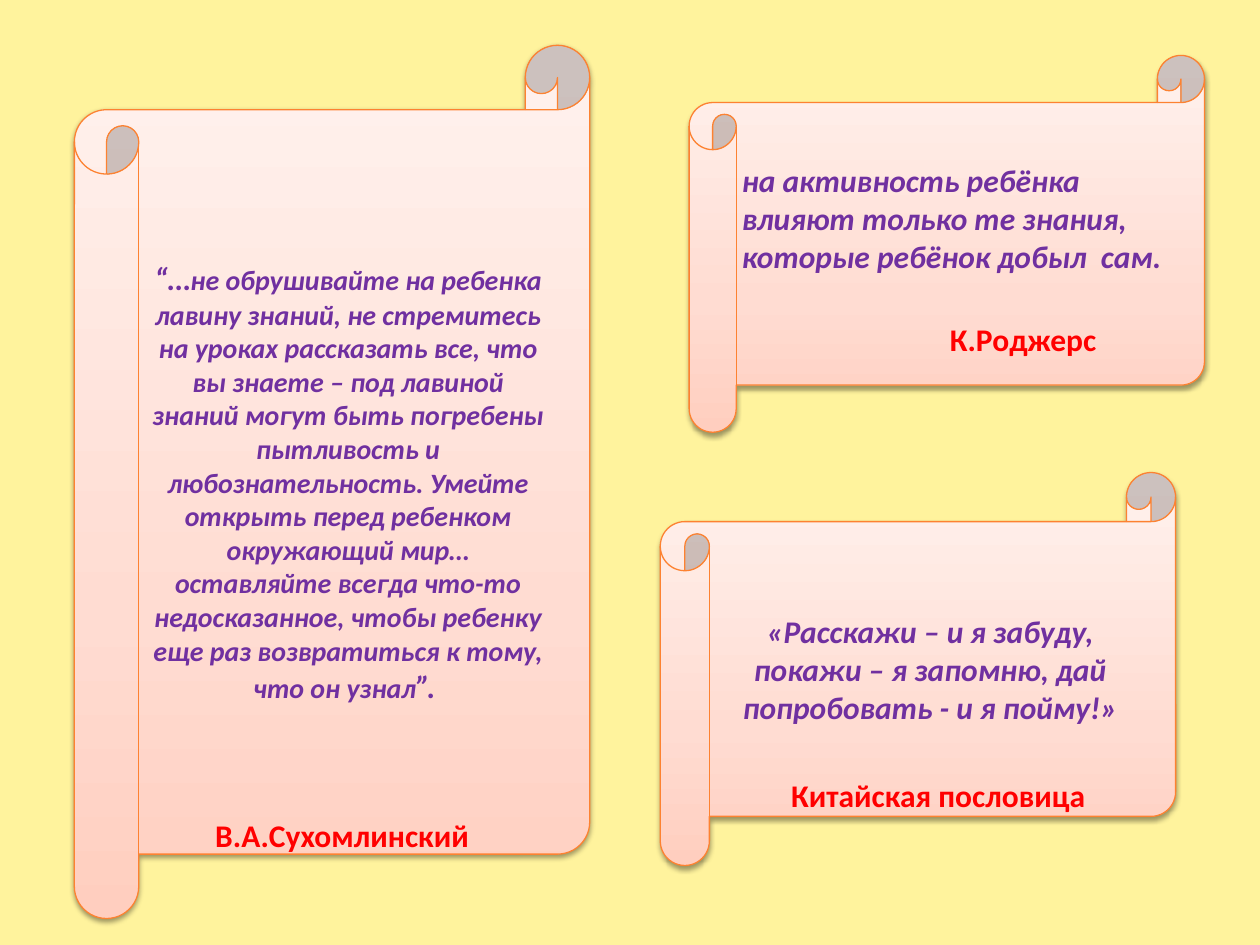
from dataclasses import dataclass

from lxml import etree
from pptx import Presentation
from pptx.dml.color import RGBColor
from pptx.enum.shapes import MSO_SHAPE
from pptx.enum.text import MSO_ANCHOR, MSO_AUTO_SIZE, PP_ALIGN
from pptx.oxml.ns import qn
from pptx.shapes.autoshape import Shape
from pptx.slide import Slide
from pptx.text.text import _Paragraph
from pptx.util import Pt

SCROLL = MSO_SHAPE.HORIZONTAL_SCROLL
MIDDLE = MSO_ANCHOR.MIDDLE
CENTER = PP_ALIGN.CENTER
LEFT = PP_ALIGN.LEFT
FIT_SHAPE = MSO_AUTO_SIZE.SHAPE_TO_FIT_TEXT
BLANK_LAYOUT = 6


@dataclass(frozen=True)
class Theme:
    font: str = "Calibri"
    background: str = "FFF39D"
    outline: str = "FD8231"
    quote: str = "7030A0"
    author: str = "FF0000"
    shadow: str = "000000"
    paper: tuple[tuple[int, str], ...] = ((0, "FFCEBF"), (35, "FFDCD2"), (100, "FFF2EE"))
    large: float = 18
    small: float = 16


@dataclass(frozen=True)
class Box:
    left: float
    top: float
    width: float
    height: float

    def lengths(self) -> tuple[Pt, Pt, Pt, Pt]:
        return Pt(self.left), Pt(self.top), Pt(self.width), Pt(self.height)


@dataclass(frozen=True)
class Piece:
    text: str
    size: float


@dataclass(frozen=True)
class Scroll:
    box: Box
    pieces: tuple[Piece, ...] = ()


@dataclass(frozen=True)
class Label:
    box: Box
    text: str
    color: str
    italic: bool = False


THEME = Theme()

SCROLLS = (
    Scroll(
        Box(42.5, 25.9, 294.5, 499),
        (
            Piece("“…", THEME.large),
            Piece(
                "не обрушивайте на ребенка лавину знаний, не стремитесь на уроках "
                "рассказать все, что вы знаете – под лавиной знаний могут быть погребены "
                "пытливость и любознательность. Умейте открыть перед ребенком окружающий "
                "мир… оставляйте всегда что-то недосказанное, чтобы ребенку еще раз "
                "возвратиться к тому, что он узнал",
                THEME.small,
            ),
            Piece("”. ", THEME.large),
        ),
    ),
    Scroll(Box(393.8, 31.7, 294.5, 215.3)),
    Scroll(
        Box(377.3, 270, 294.5, 224.6),
        (Piece("«Расскажи – и я забуду, покажи – я запомню, дай попробовать - и я пойму!»", THEME.large),),
    ),
)

LABELS = (
    Label(
        Box(416.9, 88.6, 254.9, 72.7),
        "на активность ребёнка влияют только те знания, которые ребёнок добыл  сам.",
        THEME.quote,
        True,
    ),
    Label(Box(445, 439.9, 243.4, 29), "Китайская пословица", THEME.author),
    Label(Box(115.9, 463, 215.3, 29), "В.А.Сухомлинский", THEME.author),
    Label(Box(535.7, 179.3, 127.4, 29), "К.Роджерс", THEME.author),
)


def add_color(parent: etree._Element, color: str) -> etree._Element:
    return etree.SubElement(parent, qn("a:srgbClr"), val=color)


def fill_paper(shape: Shape) -> None:
    shape.fill.gradient()
    shape.fill.gradient_angle = 90
    stops = shape._element.spPr.find(qn("a:gradFill")).find(qn("a:gsLst"))
    for stop in list(stops):
        stops.remove(stop)
    for position, color in THEME.paper:
        add_color(etree.SubElement(stops, qn("a:gs"), pos=str(position * 1000)), color)


def add_shadow(shape: Shape) -> None:
    shape.shadow.inherit = False
    effects = shape._element.spPr.find(qn("a:effectLst"))
    shadow = etree.SubElement(
        effects,
        qn("a:outerShdw"),
        blurRad=str(Pt(3.1)),
        dist=str(Pt(1.6)),
        dir="5400000",
        rotWithShape="0",
    )
    etree.SubElement(add_color(shadow, THEME.shadow), qn("a:alpha"), val="38000")


def add_piece(paragraph: _Paragraph, piece: Piece, color: str, italic: bool) -> None:
    run = paragraph.add_run()
    run.text = piece.text
    run.font.name = THEME.font
    run.font.size = Pt(piece.size)
    run.font.bold = True
    run.font.italic = italic
    run.font.color.rgb = RGBColor.from_string(color)


def draw_scroll(slide: Slide, scroll: Scroll) -> None:
    shape = slide.shapes.add_shape(SCROLL, *scroll.box.lengths())
    fill_paper(shape)
    shape.line.color.rgb = RGBColor.from_string(THEME.outline)
    shape.line.width = Pt(0.75)
    add_shadow(shape)
    shape.text_frame.vertical_anchor = MIDDLE
    paragraph = shape.text_frame.paragraphs[0]
    paragraph.alignment = CENTER
    for piece in scroll.pieces:
        add_piece(paragraph, piece, THEME.quote, True)


def draw_label(slide: Slide, label: Label) -> None:
    text_frame = slide.shapes.add_textbox(*label.box.lengths()).text_frame
    text_frame.word_wrap = True
    text_frame.auto_size = FIT_SHAPE
    paragraph = text_frame.paragraphs[0]
    paragraph.alignment = LEFT
    add_piece(paragraph, Piece(label.text, THEME.large), label.color, label.italic)


def main() -> None:
    presentation = Presentation()
    presentation.slide_width = Pt(720)
    presentation.slide_height = Pt(540)
    slide = presentation.slides.add_slide(presentation.slide_layouts[BLANK_LAYOUT])
    slide.background.fill.solid()
    slide.background.fill.fore_color.rgb = RGBColor.from_string(THEME.background)
    for scroll in SCROLLS:
        draw_scroll(slide, scroll)
    for label in LABELS:
        draw_label(slide, label)
    presentation.save("out.pptx")


if __name__ == "__main__":
    main()
